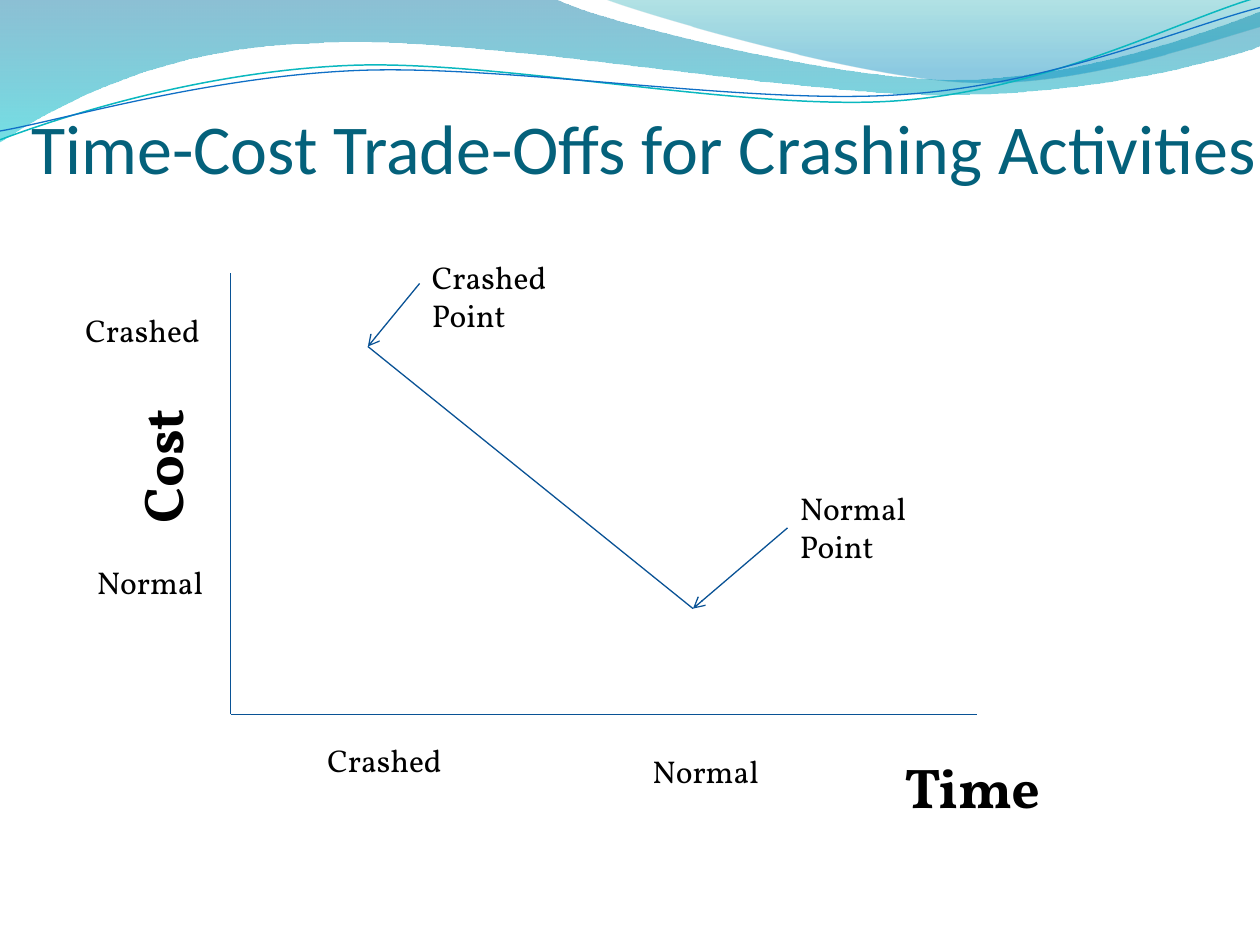
"""Build the time-cost trade-off slide with its wave header and crash diagram."""
from lxml import etree
from pptx import Presentation
from pptx.dml.color import RGBColor
from pptx.enum import shapes, text
from pptx.oxml.ns import qn
from pptx.util import Inches, Pt

AXIS_BLUE = RGBColor(0x09, 0x52, 0x95)
TITLE_TEAL = RGBColor(0x04, 0x61, 0x7B)
WAVE_TEAL = RGBColor(0x0A, 0xB8, 0xBF)
WAVE_BLUE = RGBColor(0x0F, 0x6F, 0xC6)
BLACK = RGBColor(0, 0, 0)
DEEP_BLUE = RGBColor(0x00, 0x74, 0xA1)
AQUA = RGBColor(0x00, 0xC6, 0xCF)
SEA_GREEN = RGBColor(0x00, 0xA1, 0xA9)
SKY_BLUE = RGBColor(0x00, 0x8B, 0xBF)

TITLE = "Time-Cost Trade-Offs for Crashing Activities"

BANDS = [
    ((0, 0),
     [[(4.4, -0.01)],
      [(4.76, 0.17), (6.64, 0.63), (7.58, 0.63)],
      [(8.53, 0.63), (9.58, 0.26), (10, 0.09)],
      [(10.01, 0.36)],
      [(9.83, 0.44), (8.7, 0.76), (7.46, 0.75)],
      [(6.22, 0.75), (3.82, 0.28), (2.57, 0.34)],
      [(1.29, 0.36), (0.46, 0.83), (-0.01, 1.13)],
      [(0, 0)]],
     [(0, DEEP_BLUE, 45), (1, AQUA, 55)]),
    ((4.79, -0.01),
     [[(5.09, 0.11), (6.82, 0.62), (7.69, 0.65)],
      [(8.56, 0.69), (9.61, 0.32), (10, 0.21)],
      [(10, 0)],
      [(4.79, -0.01)]],
     [(0, SEA_GREEN, 30), (0.8, SKY_BLUE, 45)]),
]
WAVES = [
    ((0, 1.11),
     [[(0.48, 0.93), (1.58, 0.57), (2.77, 0.52)],
      [(3.95, 0.47), (5.93, 0.89), (7.13, 0.8)],
      [(8.33, 0.71), (9.38, 0.15), (9.98, -0.02)]],
     WAVE_TEAL, 0.85),
    ((0, 1.04),
     [[(0.47, 0.96), (1.64, 0.61), (2.83, 0.56)],
      [(4.03, 0.51), (5.97, 0.84), (7.17, 0.75)],
      [(8.36, 0.67), (9.41, 0.21), (10, 0.06)]],
     WAVE_BLUE, 0.75),
]

ORIGIN = (1.83, 5.67)
CRASHED_POINT = (2.92, 2.75)
NORMAL_POINT = (5.5, 4.83)
LINES = [
    ((1.83, 2.17), ORIGIN, False),
    (ORIGIN, (7.75, 5.67), False),
    (CRASHED_POINT, NORMAL_POINT, False),
    ((3.33, 2.25), CRASHED_POINT, True),
    ((6.25, 4.19), NORMAL_POINT, True),
]
POINT_LABELS = [
    ("Crashed", 0.58, 2.42, 0.4),
    ("Normal", 0.67, 4.42, 0.4),
    ("Crashed", 2.5, 5.83, 0.4),
    ("Normal", 5.08, 5.92, 0.4),
    ("Crashed Point", 3.33, 2, 0.71),
    ("Normal Point", 6.25, 3.83, 0.71),
]
AXIS_TITLES = [("Cost", 0.7, 3.35, 1.17, 270), ("Time", 7.08, 5.92, 1.42, 0)]


def add_outline(slide, start, segments, close):
    builder = slide.shapes.build_freeform(*map(Inches, start))
    points = [tuple(map(Inches, point)) for segment in segments for point in segment]
    builder.add_line_segments(points, close=close)
    shape = builder.convert_to_shape()
    shape.shadow.inherit = False
    steps = iter(list(shape._element.iter(qn("a:lnTo"))))
    for segment in segments:
        parts = [next(steps) for _ in segment]
        if len(parts) == 3:
            curve = etree.Element(qn("a:cubicBezTo"))
            parts[0].addprevious(curve)
            for part in parts:
                curve.append(part[0])
                part.getparent().remove(part)
    return shape


def add_band(slide, start, segments, stops):
    shape = add_outline(slide, start, segments, True)
    shape.line.fill.background()
    shape.fill.gradient()
    shape.fill.gradient_angle = 270
    for stop, (position, color, _) in zip(shape.fill.gradient_stops, stops):
        stop.position = position
        stop.color.rgb = color
    colors = shape._element.spPr.find(qn("a:gradFill")).iter(qn("a:srgbClr"))
    for element, (_, _, opacity) in zip(colors, stops):
        etree.SubElement(element, qn("a:alpha"), val=str(opacity * 1000))


def add_wave(slide, start, segments, color, width):
    shape = add_outline(slide, start, segments, False)
    shape.fill.background()
    shape.line.color.rgb = color
    shape.line.width = Pt(width)


def add_line(slide, start, end, arrow):
    connector = slide.shapes.add_connector(
        shapes.MSO_CONNECTOR.STRAIGHT, *map(Inches, start + end))
    connector.line.color.rgb = AXIS_BLUE
    connector.line.width = Pt(0.75)
    if arrow:
        outline = connector._element.spPr.find(qn("a:ln"))
        etree.SubElement(outline, qn("a:tailEnd"), type="arrow")
    etree.SubElement(connector._element.spPr, qn("a:effectLst"))


def add_text(slide, words, box, size, font="Vollkorn", color=BLACK, bold=False):
    shape = slide.shapes.add_textbox(*map(Inches, box))
    shape.text_frame.word_wrap = True
    paragraph = shape.text_frame.paragraphs[0]
    paragraph.text = words
    paragraph.font.name = font
    paragraph.font.size = Pt(size)
    paragraph.font.bold = bold
    paragraph.font.color.rgb = color
    return shape


def main():
    presentation = Presentation()
    presentation.slide_width, presentation.slide_height = Inches(10), Inches(7.5)
    slide = presentation.slides.add_slide(presentation.slide_layouts[6])
    for band in BANDS:
        add_band(slide, *band)
    for wave in WAVES:
        add_wave(slide, *wave)
    title = add_text(slide, TITLE, (0.25, 0.67, 10, 0.83), 40, "Calibri", TITLE_TEAL)
    frame = title.text_frame
    frame.vertical_anchor = text.MSO_ANCHOR.BOTTOM
    frame.margin_left = frame.margin_right = frame.margin_bottom = 0
    for line in LINES:
        add_line(slide, *line)
    for words, left, top, height in POINT_LABELS:
        add_text(slide, words, (left, top, 1.17, height), 18)
    for words, left, top, width, rotation in AXIS_TITLES:
        label = add_text(slide, words, (left, top, width, 0.64), 32, bold=True)
        label.rotation = rotation
    presentation.save("out.pptx")


if __name__ == "__main__":
    main()
